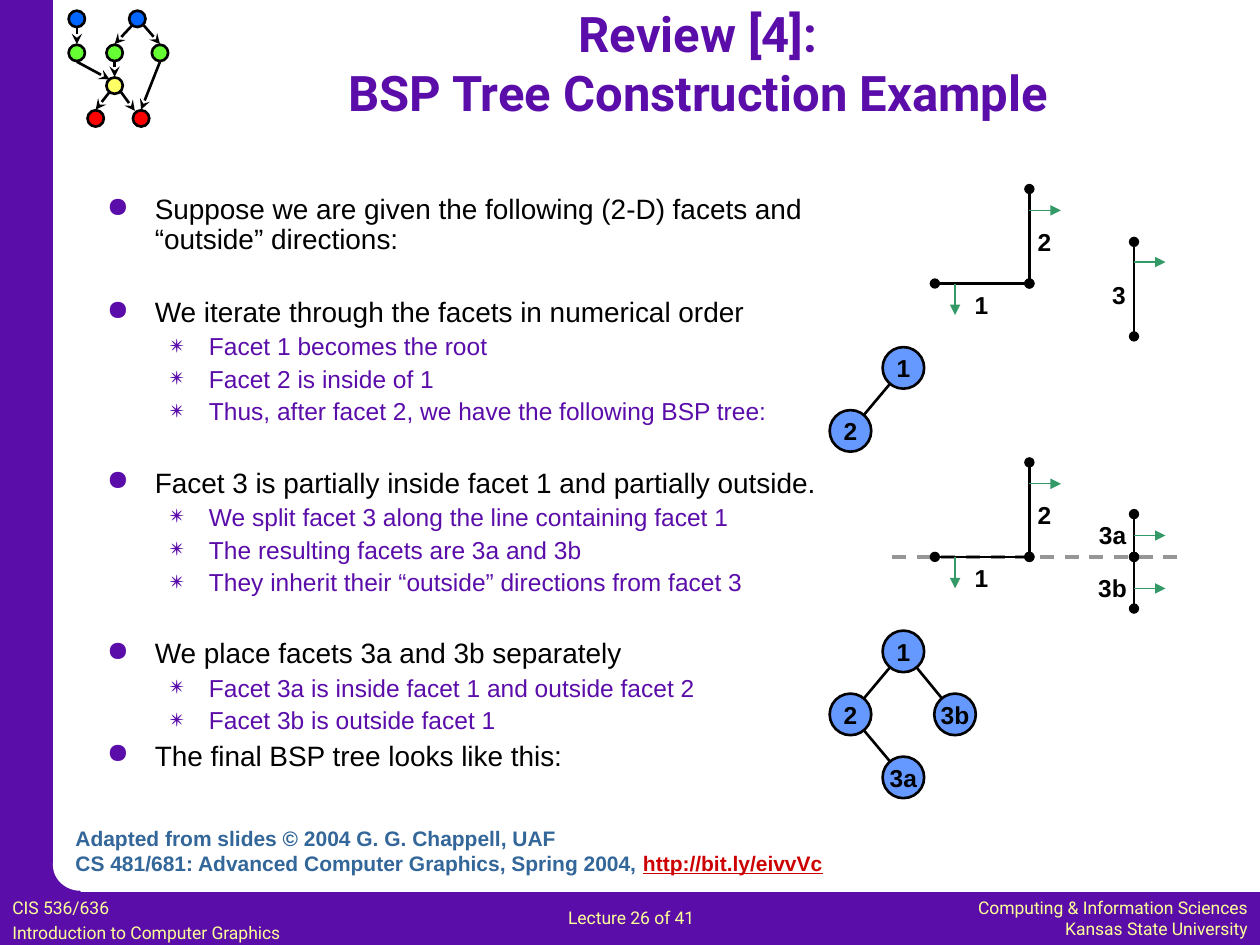
from lxml.etree import SubElement
from pptx import Presentation
from pptx.dml.color import RGBColor
from pptx.enum.dml import MSO_LINE
from pptx.enum.shapes import MSO_CONNECTOR, MSO_SHAPE
from pptx.enum.text import MSO_ANCHOR, PP_ALIGN
from pptx.oxml.ns import qn
from pptx.util import Inches, Pt

PURPLE, BLACK, WHITE = "5B0DAA", "000000", "FFFFFF"
CREAM, GREEN, NODE_BLUE, STEEL = "FFFF99", "339966", "6699FF", "336699"

OUTLINE = [
    ("Suppose we are given the following (2-D) facets and\n“outside” directions:", []),
    ("We iterate through the facets in numerical order",
     ["Facet 1 becomes the root", "Facet 2 is inside of 1",
      "Thus, after facet 2, we have the following BSP tree:"]),
    ("Facet 3 is partially inside facet 1 and partially outside.",
     ["We split facet 3 along the line containing facet 1",
      "The resulting facets are 3a and 3b",
      "They inherit their “outside” directions from facet 3"]),
    ("We place facets 3a and 3b separately",
     ["Facet 3a is inside facet 1 and outside facet 2",
      "Facet 3b is outside facet 1"]),
    ("The final BSP tree looks like this:", []),
]


def color(hex_string):
    return RGBColor.from_string(hex_string)


class SlideBuilder:
    def __init__(self, page, font="Arial", line_width=1.5):
        self.page = page
        self.font = font
        self.line_width = line_width

    def shape(self, kind, left, top, width, height, fill, outline=None):
        shape = self.page.shapes.add_shape(
            kind, Inches(left), Inches(top), Inches(width), Inches(height))
        shape.shadow.inherit = False
        shape.fill.solid()
        shape.fill.fore_color.rgb = color(fill)
        if outline:
            shape.line.color.rgb = color(outline)
            shape.line.width = Pt(self.line_width)
        else:
            shape.line.fill.background()
        return shape

    def circle(self, center, size, fill):
        x, y = center
        return self.shape(MSO_SHAPE.OVAL, x - size / 2, y - size / 2, size, size, fill, BLACK)

    def line(self, start, end, stroke=BLACK, width=None, head=None, tail=None, dash=None):
        line = self.page.shapes.add_connector(
            MSO_CONNECTOR.STRAIGHT, *(Inches(value) for value in (*start, *end)))
        line.line.color.rgb = color(stroke)
        line.line.width = Pt(width or self.line_width)
        if dash:
            line.line.dash_style = dash
        properties = line._element.spPr
        for tag, ending in (("a:headEnd", head), ("a:tailEnd", tail)):
            if ending:
                SubElement(properties.find(qn("a:ln")), qn(tag), type=ending)
        SubElement(properties, qn("a:effectLst"))

    def style(self, para, size, fill, bold=None, font=None, align=None):
        para.alignment = align
        para.font.name = font or self.font
        para.font.size = Pt(size)
        para.font.bold = bold
        para.font.color.rgb = color(fill)

    def text(self, left, top, width, height, lines, size, fill, gap=0,
             anchor=MSO_ANCHOR.TOP, **style):
        """Add a text box with one paragraph per line and return its frame."""
        box = self.page.shapes.add_textbox(
            Inches(left), Inches(top), Inches(width), Inches(height))
        frame = box.text_frame
        frame.word_wrap = True
        frame.vertical_anchor = anchor
        for index, words in enumerate(lines):
            para = frame.add_paragraph() if index else frame.paragraphs[0]
            para.text = words
            if index and gap:
                para.space_before = Pt(gap)
            self.style(para, size, fill, **style)
        return frame

    def bullet(self, para, words, symbol, margin, hanging, before, size, fill):
        para.text = words
        properties = para._p.get_or_add_pPr()
        properties.set("marL", str(Inches(margin)))
        properties.set("indent", str(-Inches(hanging)))
        bullet_color = SubElement(properties, qn("a:buClr"))
        SubElement(bullet_color, qn("a:srgbClr"), val=PURPLE)
        SubElement(properties, qn("a:buChar"), char=symbol)
        para.line_spacing = 0.9
        if before:
            para.space_before = Pt(before)
        self.style(para, size, fill)

    def outline(self, left, top, width, height, topics):
        frame = self.text(left, top, width, height, [], 16, BLACK)
        for index, (topic, details) in enumerate(topics):
            para = frame.add_paragraph() if index else frame.paragraphs[0]
            last = index == len(topics) - 1
            before = 0 if index == 0 else 3.9 if last else 24.4
            self.bullet(para, topic, "●", 0.38, 0.38, before, 16, BLACK)
            for detail in details:
                self.bullet(frame.add_paragraph(), detail, "✴", 0.81, 0.31, 3.5, 14, PURPLE)

    def label(self, left, top, words, width=0.42):
        self.text(left, top, width, 0.33, [words], 14, BLACK, bold=True, align=PP_ALIGN.CENTER)

    def facet(self, start, end):
        self.line(start, end, head="oval", tail="oval")

    def normal(self, x, y, across=0.25, down=0):
        """Draw the arrow that marks the outside of a facet."""
        self.line((x, y), (x + across, y + down), GREEN, 0.75, tail="triangle")

    def first_facets(self, base):
        """Draw facets 1 and 2, which meet at height base."""
        self.facet((7.42, base), (8.17, base))
        self.facet((8.17, base - 0.75), (8.17, base))
        self.normal(7.58, base, 0, 0.25)
        self.normal(8.17, base - 0.58)
        self.label(7.58, base, "1")
        self.label(8.08, base - 0.5, "2")

    def tree(self, nodes, edges):
        for parent, child in edges:
            self.line(nodes[parent], nodes[child])
        for name, center in nodes.items():
            frame = self.circle(center, 0.33, NODE_BLUE).text_frame
            frame.word_wrap = False
            frame.vertical_anchor = MSO_ANCHOR.MIDDLE
            para = frame.paragraphs[0]
            para.text = name
            self.style(para, 14, BLACK, bold=True, align=PP_ALIGN.CENTER)

    def network(self):
        """Draw the small coloured graph in the corner."""
        rows = [("0066FF", 0.15, (0.61, 1.09)), ("66FF33", 0.42, (0.61, 0.91, 1.27)),
                ("FFFF66", 0.68, (0.91,)), ("FF0000", 0.94, (0.76, 1.12))]
        for fill, y, columns in rows:
            for x in columns:
                self.circle((x, y), 0.13, fill)
        for start, end in [((0.61, 0.22), (0.61, 0.35)), ((1.05, 0.2), (0.91, 0.35)),
                           ((1.14, 0.2), (1.27, 0.35)), ((0.61, 0.49), (0.87, 0.63)),
                           ((0.91, 0.49), (0.91, 0.61)), ((1.27, 0.49), (1.12, 0.87)),
                           ((0.96, 0.73), (1.07, 0.88)), ((0.87, 0.73), (0.76, 0.87))]:
            self.line(start, end, tail="stealth")

    def frame(self):
        """Draw the side and bottom bars with their rounded inner corner."""
        for area in [(0, 7.08, 10, 0.42), (0, 0, 0.42, 7.5), (0.2, 6.85, 0.44, 0.44)]:
            self.shape(MSO_SHAPE.RECTANGLE, *area, PURPLE)
        self.shape(MSO_SHAPE.OVAL, 0.42, 6.66, 0.44, 0.41, WHITE)

    def footer(self):
        self.text(7.18, 7.07, 2.82, 0.43,
                  ["Computing & Information Sciences", "Kansas State University"],
                  10, CREAM, font="Roboto", align=PP_ALIGN.RIGHT)
        self.text(0, 7.07, 2.95, 0.44, ["CIS 536/636", "Introduction to Computer Graphics"],
                  10, CREAM, gap=2, font="Roboto")
        self.text(4.41, 7.15, 1.52, 0.27, ["Lecture 26 of 41"], 10, CREAM, font="Roboto")


def main():
    deck = Presentation()
    deck.slide_width, deck.slide_height = Inches(10), Inches(7.5)
    builder = SlideBuilder(deck.slides.add_slide(deck.slide_layouts[6]))

    builder.frame()
    builder.network()
    builder.footer()
    builder.outline(0.75, 1.5, 8.69, 5.17, OUTLINE)

    builder.first_facets(2.25)
    builder.facet((9, 1.92), (9, 2.67))
    builder.normal(9, 2.08)
    builder.label(8.67, 2.17, "3")

    builder.tree({"1": (7.17, 2.92), "2": (6.75, 3.42)}, [("1", "2")])
    builder.tree({"1": (7.17, 5.17), "2": (6.75, 5.67), "3b": (7.58, 5.67), "3a": (7.17, 6.17)},
                 [("1", "2"), ("1", "3b"), ("2", "3a")])

    builder.line((7.08, 4.42), (9.42, 4.42), "969696", 2, dash=MSO_LINE.DASH)
    builder.first_facets(4.42)
    for name, start, end, arrow in [("3a", 4.08, 4.42, 4.25), ("3b", 4.42, 4.83, 4.67)]:
        builder.facet((9, start), (9, end))
        builder.normal(9, arrow)
        builder.label(8.58, arrow - 0.17, name, 0.5)

    builder.text(1.25, 0.08, 8.58, 0.83, ["Review [4]:", "BSP Tree Construction Example"],
                 28, PURPLE, anchor=MSO_ANCHOR.MIDDLE, bold=True, font="Roboto",
                 align=PP_ALIGN.CENTER)
    credit = builder.text(0.5, 6.5, 6.19, 0.5,
                          ["Adapted from slides © 2004 G. G. Chappell, UAF",
                           "CS 481/681: Advanced Computer Graphics, Spring 2004, "],
                          12, STEEL, bold=True)
    address = credit.paragraphs[1].add_run()
    address.text = "http://bit.ly/eivvVc"
    address.font.underline = True
    address.font.color.rgb = color("CC0000")

    deck.save("out.pptx")


if __name__ == "__main__":
    main()
